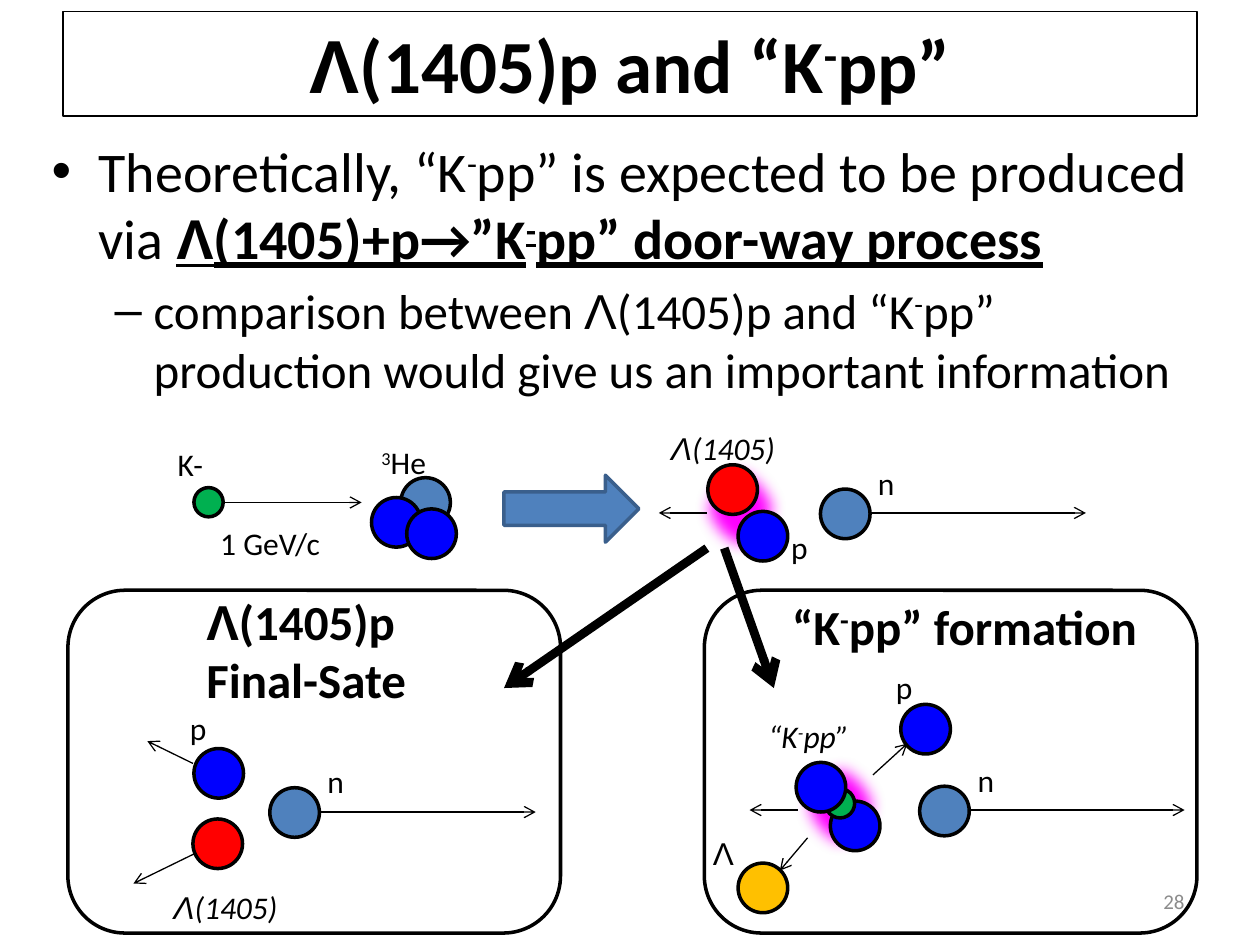
import pptx
import pptx.util
import pptx.dml.color
import pptx.enum.shapes
import pptx.enum.text
from dataclasses import dataclass
from lxml import etree
from pptx.oxml.ns import qn

Cm, Pt = pptx.util.Cm, pptx.util.Pt
SHAPE = pptx.enum.shapes.MSO_SHAPE
ANCHOR = pptx.enum.text.MSO_ANCHOR
ALIGN = pptx.enum.text.PP_ALIGN


@dataclass(frozen=True)
class Theme:
    font: str = "Calibri"
    greek: str = "Arial"
    ink: str = "000000"
    muted: str = "8C8C8C"
    proton: str = "0000FF"
    neutron: str = "4F81BD"
    kaon: str = "00B050"
    lambda_1405: str = "FF0000"
    lambda_0: str = "FFC000"
    glow: str = "FF00FF"
    arrow_edge: str = "3A5F8C"
    title: float = 42.9
    body: float = 32
    heading: float = 28
    label: float = 18
    number: float = 12


T = Theme()
BALL, SMALL = 1.0, 0.59


def rgb(color):
    return pptx.dml.color.RGBColor.from_string(color)


def write(p, text, size, color=T.ink, **fmt):
    """Append text to a paragraph: ^x^ is superscript, Λ takes the Greek font."""
    for i, part in enumerate(text.split("^")):
        for piece in part.replace("Λ", "|Λ|").split("|"):
            if not piece:
                continue
            r = p.add_run()
            r.text = piece
            r.font.name = T.greek if piece == "Λ" else T.font
            r.font.size = Pt(size)
            r.font.color.rgb = rgb(color)
            for name, value in fmt.items():
                setattr(r.font, name, value)
            if i % 2:
                r.font._element.set("baseline", "30000")


def shape(s, kind, x, y, w, h, fill=None, line=T.ink, width=2):
    sp = s.shapes.add_shape(kind, Cm(x), Cm(y), Cm(w), Cm(h))
    sp.shadow.inherit = False
    if fill:
        sp.fill.solid()
        sp.fill.fore_color.rgb = rgb(fill)
    else:
        sp.fill.background()
    if line:
        sp.line.color.rgb = rgb(line)
        sp.line.width = Pt(width)
    else:
        sp.line.fill.background()
    return sp


def glow(s, x, y):
    sp = shape(s, SHAPE.OVAL, x, y, 1.98, 2.18, T.glow, None)
    effects = sp._element.spPr.find(qn("a:effectLst"))
    etree.SubElement(effects, qn("a:softEdge")).set("rad", str(Cm(0.32)))


def arrow(s, x1, y1, x2, y2, width=0.75):
    c = s.shapes.add_connector(pptx.enum.shapes.MSO_CONNECTOR.STRAIGHT,
                               Cm(x1), Cm(y1), Cm(x2), Cm(y2))
    c.line.color.rgb = rgb(T.ink)
    c.line.width = Pt(width)
    etree.SubElement(c.line._get_or_add_ln(), qn("a:tailEnd")).set("type", "arrow")
    etree.SubElement(c._element.spPr, qn("a:effectLst"))


def label(s, x, y, w, lines, size=T.label, **fmt):
    sp = s.shapes.add_textbox(Cm(x), Cm(y), Cm(w), Cm(size * 0.056 * len(lines)))
    tf = sp.text_frame
    tf.word_wrap = False
    tf.auto_size = pptx.enum.text.MSO_AUTO_SIZE.SHAPE_TO_FIT_TEXT
    for i, line in enumerate(lines):
        write(tf.add_paragraph() if i else tf.paragraphs[0], line, size, **fmt)


def particles(s, left, top, balls, arrows, labels):
    """Draw balls, arrows and labels placed relative to the region's corner."""
    for x, y, d, color in balls:
        shape(s, SHAPE.OVAL, left + x, top + y, d, d, color)
    for x1, y1, x2, y2 in arrows:
        arrow(s, left + x1, top + y1, left + x2, top + y2)
    for x, y, w, text, italic in labels:
        label(s, left + x, top + y, w, [text], italic=italic)


def title(s, x, y, w, h):
    tf = shape(s, SHAPE.RECTANGLE, x, y, w, h, width=0.75).text_frame
    tf.vertical_anchor = ANCHOR.MIDDLE
    tf.paragraphs[0].alignment = ALIGN.CENTER
    write(tf.paragraphs[0], "Λ(1405)p and “K^-^pp”", T.title, bold=True)


def bullet(p, char, margin, indent, level):
    p.level = level
    pPr = p._p.get_or_add_pPr()
    pPr.set("marL", str(Cm(margin)))
    pPr.set("indent", str(Cm(-indent)))
    etree.SubElement(pPr, qn("a:buFont")).set("typeface", T.greek)
    etree.SubElement(pPr, qn("a:buChar")).set("char", char)


def body(s, x, y, w, h):
    tf = s.shapes.add_textbox(Cm(x), Cm(y), Cm(w), Cm(h)).text_frame
    tf.word_wrap = True
    p = tf.paragraphs[0]
    bullet(p, "•", 0.95, 0.95, 0)
    write(p, "Theoretically, “K^-^pp” is expected to be produced via ", T.body)
    write(p, "Λ(1405)+p→”K^-^pp” door-way process", T.body, bold=True, underline=True)
    p = tf.add_paragraph()
    p.space_before = Pt(5.6)
    bullet(p, "–", 2.06, 0.79, 1)
    write(p, "comparison between Λ(1405)p and “K^-^pp” production "
             "would give us an important information", T.heading)


def reaction(s, x, y):
    glow(s, x + 10.64, y + 0.67)
    particles(
        s, x, y,
        [(4.78, 1.13, BALL, T.neutron), (4.19, 1.53, BALL, T.proton),
         (4.9, 1.76, BALL, T.proton), (0.61, 1.33, SMALL, T.kaon),
         (13.24, 1.36, BALL, T.neutron), (11.58, 1.81, BALL, T.proton),
         (10.97, 0.87, BALL, T.lambda_1405)],
        [(1.22, 1.63, 3.99, 1.63), (14.23, 1.84, 18.59, 1.84),
         (10.95, 1.84, 9.98, 1.84)],
        [(0.03, 0.34, 1.04, "K-", False), (0.89, 1.94, 2.54, "1 GeV/c", False),
         (4.14, 0.31, 1.45, "^3^He", False), (9.98, 0.03, 2.64, "Λ(1405)", True),
         (14.15, 0.72, 0.86, "n", False), (12.4, 2.02, 0.86, "p", False)])
    shape(s, SHAPE.RIGHT_ARROW, x + 6.86, y + 1.08, 2.72, 1.35, T.neutron, T.arrow_edge)


def final_state(s, x, y, w, h):
    shape(s, SHAPE.ROUNDED_RECTANGLE, x, y, w, h)
    label(s, x + 2.54, y - 0.11, 4.6, ["Λ(1405)p", "Final-Sate"], T.heading, bold=True)
    particles(
        s, x, y,
        [(4.07, 3.98, BALL, T.neutron), (2.54, 3.19, BALL, T.proton),
         (2.52, 4.61, BALL, T.lambda_1405)],
        [(5.06, 4.47, 9.43, 4.47), (2.52, 3.49, 1.6, 3.04), (2.57, 5.3, 1.32, 5.91)],
        [(4.98, 3.34, 0.86, "n", False), (2.21, 2.27, 0.86, "p", False),
         (1.88, 5.88, 2.64, "Λ(1405)", True)])


def formation(s, x, y, w, h):
    shape(s, SHAPE.ROUNDED_RECTANGLE, x, y, w, h)
    label(s, x + 1.52, y, 7.57, ["“K^-^pp” formation"], T.heading, bold=True)
    glow(s, x + 1.75, y + 3.26)
    particles(
        s, x, y,
        [(4.34, 3.95, BALL, T.neutron), (2.54, 4.25, BALL, T.proton),
         (2.44, 4.0, SMALL, T.kaon), (0.68, 5.5, BALL, T.lambda_0),
         (3.96, 2.3, BALL, T.proton), (1.85, 3.47, BALL, T.proton)],
        [(5.33, 4.43, 9.68, 4.43), (1.88, 4.43, 0.91, 4.43),
         (2.08, 4.99, 1.52, 5.65), (3.4, 3.72, 4.09, 3.09)],
        [(5.26, 3.31, 0.86, "n", False), (3.61, 1.44, 0.86, "p", False),
         (1.04, 2.43, 2.24, "“K^-^pp”", True), (-0.08, 4.79, 0.97, "Λ", False)])


def slide_number(s, x, y, w, h):
    tf = s.shapes.add_textbox(Cm(x), Cm(y), Cm(w), Cm(h)).text_frame
    tf.word_wrap = True
    tf.vertical_anchor = ANCHOR.MIDDLE
    tf.paragraphs[0].alignment = ALIGN.RIGHT
    write(tf.paragraphs[0], "28", T.number, T.muted)


def main():
    prs = pptx.Presentation()
    prs.slide_width, prs.slide_height = Cm(25.4), Cm(19.05)
    s = prs.slides.add_slide(prs.slide_layouts[6])
    title(s, 1.27, 0.23, 22.86, 2.11)
    body(s, 0.79, 2.62, 23.62, 7.57)
    slide_number(s, 18.21, 17.65, 5.92, 1.02)
    final_state(s, 1.37, 11.9, 9.93, 6.91)
    formation(s, 14.2, 11.9, 9.93, 6.91)
    reaction(s, 3.3, 8.5)
    arrow(s, 14.25, 11.05, 10.16, 13.87, 5)
    arrow(s, 14.6, 11.05, 15.6, 13.87, 5)
    prs.save("out.pptx")


if __name__ == "__main__":
    main()
